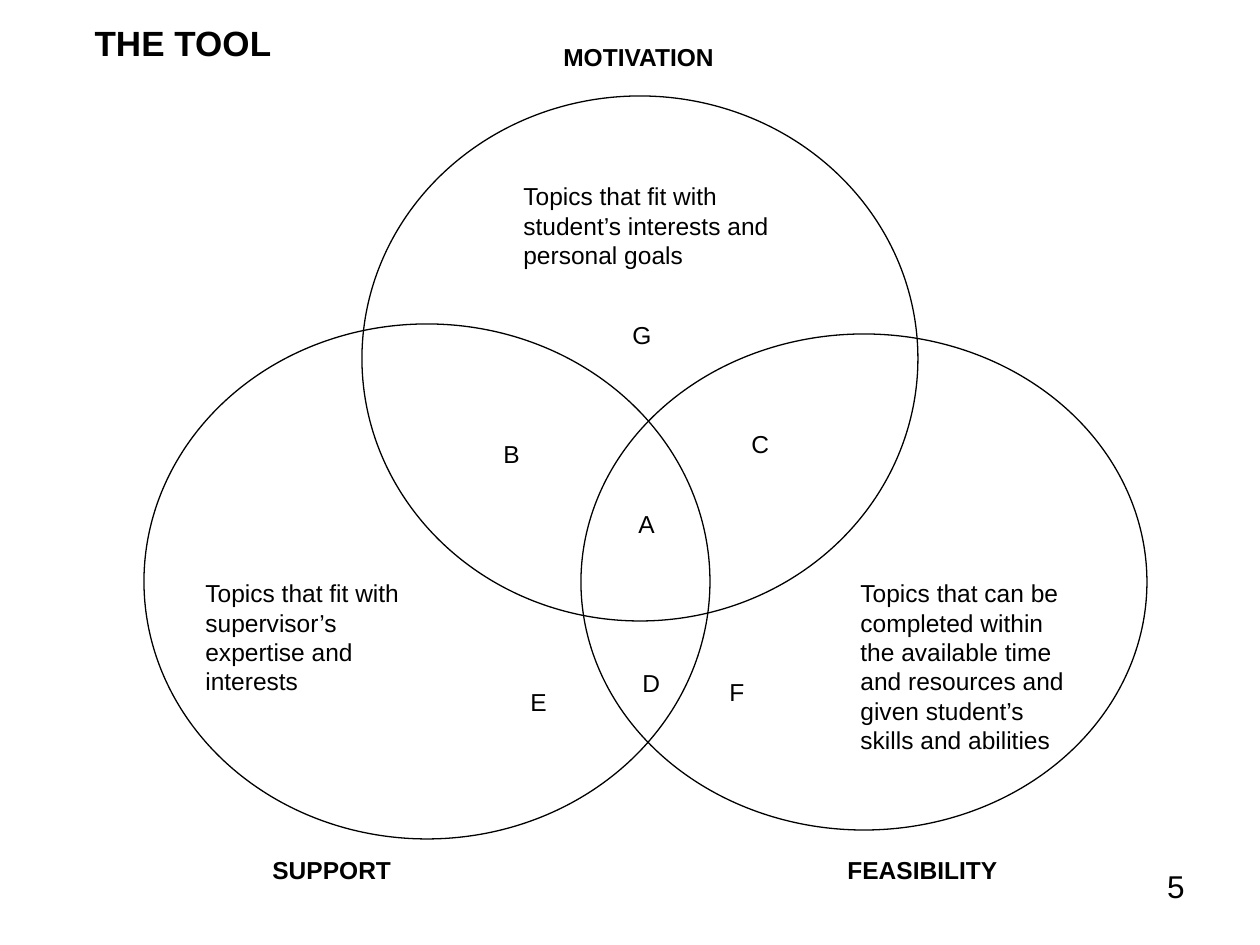
from pptx import Presentation
from pptx.dml.color import RGBColor
from pptx.enum.shapes import MSO_SHAPE as SHAPE
from pptx.enum.text import MSO_ANCHOR as ANCHOR, MSO_AUTO_SIZE as AUTO, PP_ALIGN as ALIGN
from pptx.util import Emu, Pt

BLACK = RGBColor(0, 0, 0)
FONT = "Arial"
PX = 914400 / 126


def px(n):
    return Emu(round(n * PX))


class VennSlide:
    def __init__(self, prs):
        self.slide = prs.slides.add_slide(prs.slide_layouts[5])
        self.shapes = self.slide.shapes

    def set_text(self, sp, text, size, bold=False, wrap=True, align=ALIGN.LEFT):
        tf = sp.text_frame
        tf.text = text
        tf.word_wrap = wrap
        tf.auto_size = AUTO.NONE
        tf.vertical_anchor = ANCHOR.TOP
        for p in tf.paragraphs:
            p.alignment = align
            for r in p.runs:
                r.font.name = FONT
                r.font.size = Pt(size)
                r.font.bold = bold
                r.font.color.rgb = BLACK

    def title(self, text, x, y, w, h):
        sp = self.shapes.title
        sp.left, sp.top, sp.width, sp.height = map(px, (x, y, w, h))
        self.set_text(sp, text, 20, bold=True, wrap=False)

    def circle(self, x, y, w, h):
        sp = self.shapes.add_shape(SHAPE.OVAL, *map(px, (x, y, w, h)))
        sp.shadow.inherit = False
        sp.fill.background()
        sp.line.color.rgb = BLACK
        sp.line.width = Pt(0.75)

    def text(self, text, x, y, w, h, size=14, **style):
        sp = self.shapes.add_textbox(*map(px, (x, y, w, h)))
        self.set_text(sp, text, size, **style)


def main():
    prs = Presentation()
    prs.slide_width, prs.slide_height = px(1260), px(945)
    s = VennSlide(prs)
    s.title("THE TOOL", 82, 15, 203, 54)

    # Overlapping circles
    s.circle(362, 96, 556, 525)
    s.circle(144, 324, 566, 515)
    s.circle(581, 334, 566, 496)

    # Region letters
    for letter, x, y in (
        ("A", 626, 503), ("B", 491, 433), ("C", 739, 423), ("D", 630, 662),
        ("E", 518, 681), ("F", 717, 671), ("G", 620, 314),
    ):
        s.text(letter, x, y, 43, 42)

    # Circle descriptions
    s.text("Topics that fit with student’s interests and personal goals",
           511, 175, 287, 101)
    s.text("Topics that fit with supervisor’s\nexpertise and interests",
           193, 572, 263, 130)
    s.text("Topics that can be completed within the available time and resources "
           "and given student’s skills and abilities", 848, 572, 248, 190)

    # Circle names
    for name, x, y, w in (
        ("MOTIVATION", 551, 36, 178), ("SUPPORT", 260, 849, 143),
        ("FEASIBILITY", 835, 849, 177),
    ):
        s.text(name, x, y, w, 42, bold=True, wrap=False)

    # Page number
    s.text("5", 903, 861, 294, 65, size=18, align=ALIGN.RIGHT)

    prs.save("out.pptx")


if __name__ == "__main__":
    main()
